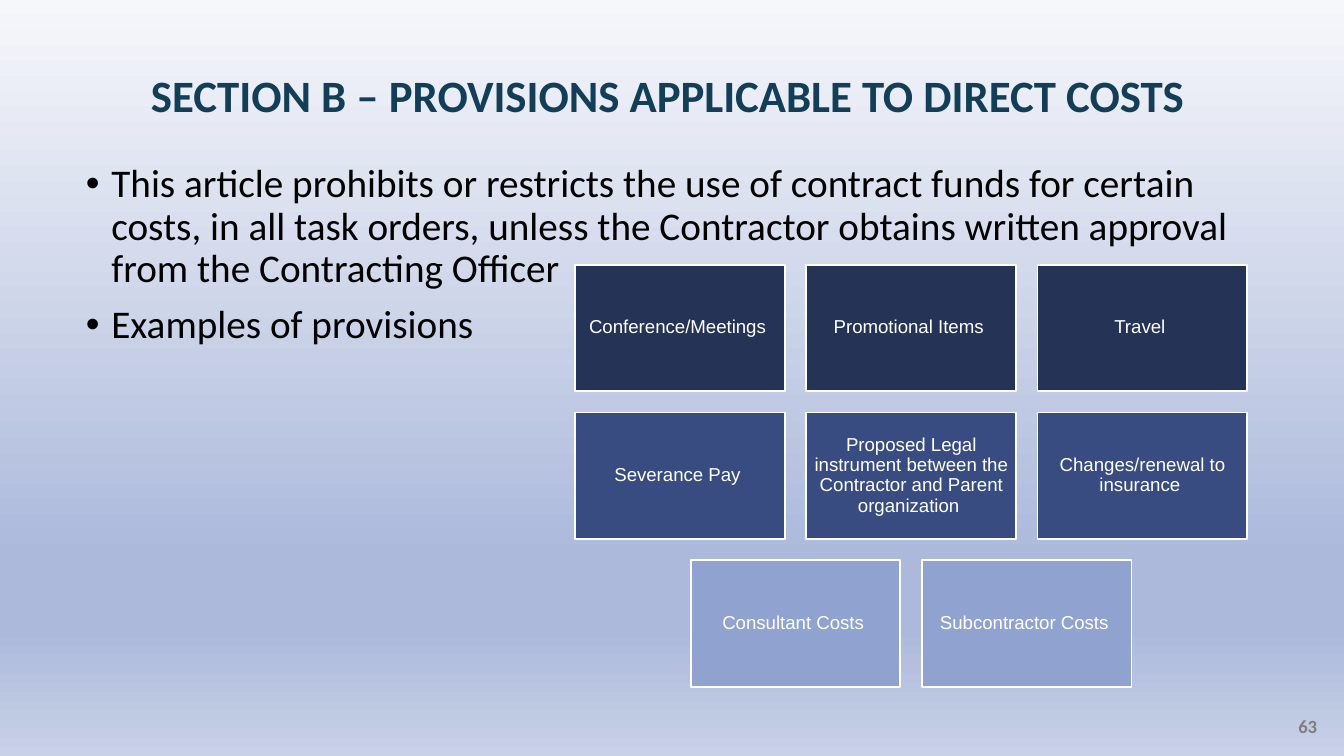
from dataclasses import dataclass

from lxml.etree import SubElement
from pptx import Presentation
from pptx.dml.color import RGBColor
from pptx.enum.shapes import MSO_SHAPE as Shape
from pptx.enum.text import MSO_ANCHOR as Anchor, PP_ALIGN as Align
from pptx.oxml.ns import qn
from pptx.util import Inches, Pt


@dataclass(frozen=True)
class Theme:
    heading_font: str = "Calibri"
    card_font: str = "Arial"
    title_color: str = "123E57"
    body_color: str = "000000"
    number_color: str = "7F7F7F"
    card_text_color: str = "FFFFFF"
    card_line_color: str = "FFFFFF"
    row_fills: tuple = ("253356", "384C81", "90A2CF")
    background_stops: tuple = (
        (0, "F6F7FB"), (74, "ACB9DB"), (83, "ACB9DB"), (100, "C8D1E7"),
    )
    title_size: int = 24
    body_size: int = 21
    card_size: int = 10
    number_size: int = 10


THEME = Theme()

BULLETS = (
    "This article prohibits or restricts the use of contract funds for certain "
    "costs, in all task orders, unless the Contractor obtains written approval "
    "from the Contracting Officer ",
    "Examples of provisions",
)
PROVISION_ROWS = (
    ("Conference/Meetings ", "Promotional Items ", "Travel "),
    (
        "Severance Pay ",
        "Proposed Legal instrument between the Contractor and Parent organization ",
        "Changes/renewal to insurance ",
    ),
    ("Consultant Costs ", "Subcontractor Costs "),
)


def paint_background(slide):
    fill = slide.background.fill
    fill.gradient()
    fill.gradient_angle = 270
    stops = slide.element.find(".//" + qn("a:gsLst"))
    for stop in list(stops):
        stops.remove(stop)
    for percent, color in THEME.background_stops:
        stop = SubElement(stops, qn("a:gs"), pos=str(percent * 1000))
        SubElement(stop, qn("a:srgbClr"), val=color)


def set_frame(frame, inset_x, inset_y, anchor):
    frame.word_wrap = True
    frame.margin_left = frame.margin_right = Inches(inset_x)
    frame.margin_top = frame.margin_bottom = Inches(inset_y)
    frame.vertical_anchor = anchor


def add_run(paragraph, text, font, size, color, bold=False):
    run = paragraph.add_run()
    run.text = text
    run.font.name = font
    run.font.size = Pt(size)
    run.font.bold = bold
    run.font.color.rgb = RGBColor.from_string(color)


def add_text_box(slide, left, top, width, height, inset_x=0, inset_y=0, anchor=Anchor.TOP):
    box = slide.shapes.add_textbox(Inches(left), Inches(top), Inches(width), Inches(height))
    set_frame(box.text_frame, inset_x, inset_y, anchor)
    return box.text_frame


def add_title(slide, text):
    frame = add_text_box(slide, 0.54, 0.56, 8.93, 0.35, anchor=Anchor.BOTTOM)
    paragraph = frame.paragraphs[0]
    paragraph.alignment = Align.CENTER
    paragraph.line_spacing = 0.9
    add_run(paragraph, text, THEME.heading_font, THEME.title_size, THEME.title_color, True)


def add_page_number(slide, text):
    paragraph = add_text_box(slide, 9.46, 5.32, 0.34, 0.2).paragraphs[0]
    paragraph.alignment = Align.RIGHT
    add_run(paragraph, text, THEME.heading_font, THEME.number_size, THEME.number_color, True)


def set_bullet(paragraph, indent):
    properties = paragraph._p.get_or_add_pPr()
    properties.set("marL", str(Inches(indent)))
    properties.set("indent", str(-Inches(indent)))
    SubElement(properties, qn("a:buFont"), typeface="Arial")
    SubElement(properties, qn("a:buChar"), char="•")


def add_bullets(slide, texts):
    frame = add_text_box(slide, 0.54, 1.17, 8.93, 3.94, inset_x=0.1, inset_y=0.05)
    for index, text in enumerate(texts):
        paragraph = frame.add_paragraph() if index else frame.paragraphs[0]
        set_bullet(paragraph, 0.19)
        paragraph.line_spacing = 0.9
        if index:
            paragraph.space_before = Pt(7.5)
        add_run(paragraph, text, THEME.heading_font, THEME.body_size, THEME.body_color)


def add_card(slide, left, top, width, height, text, fill):
    card = slide.shapes.add_shape(
        Shape.RECTANGLE, Inches(left), Inches(top), Inches(width), Inches(height)
    )
    card.shadow.inherit = False
    card.fill.solid()
    card.fill.fore_color.rgb = RGBColor.from_string(fill)
    card.line.color.rgb = RGBColor.from_string(THEME.card_line_color)
    card.line.width = Pt(1)
    set_frame(card.text_frame, 0.04, 0.04, Anchor.MIDDLE)
    paragraph = card.text_frame.paragraphs[0]
    paragraph.alignment = Align.CENTER
    paragraph.line_spacing = 0.9
    add_run(paragraph, text, THEME.card_font, THEME.card_size, THEME.card_text_color)


def add_card_rows(slide, rows):
    center, top, width, height, gap = 6.78, 1.97, 1.56, 0.94, 0.16
    for row_index, (row, fill) in enumerate(zip(rows, THEME.row_fills)):
        row_width = len(row) * (width + gap) - gap
        row_top = top + row_index * (height + gap)
        for column, text in enumerate(row):
            left = center - row_width / 2 + column * (width + gap)
            add_card(slide, left, row_top, width, height, text, fill)


def main():
    presentation = Presentation()
    presentation.slide_width = Inches(10)
    presentation.slide_height = Inches(10) * 9 // 16
    slide = presentation.slides.add_slide(presentation.slide_layouts[6])
    paint_background(slide)
    add_page_number(slide, "63")
    add_title(slide, "SECTION B – PROVISIONS APPLICABLE TO DIRECT COSTS ")
    add_bullets(slide, BULLETS)
    add_card_rows(slide, PROVISION_ROWS)
    presentation.save("out.pptx")


if __name__ == "__main__":
    main()
